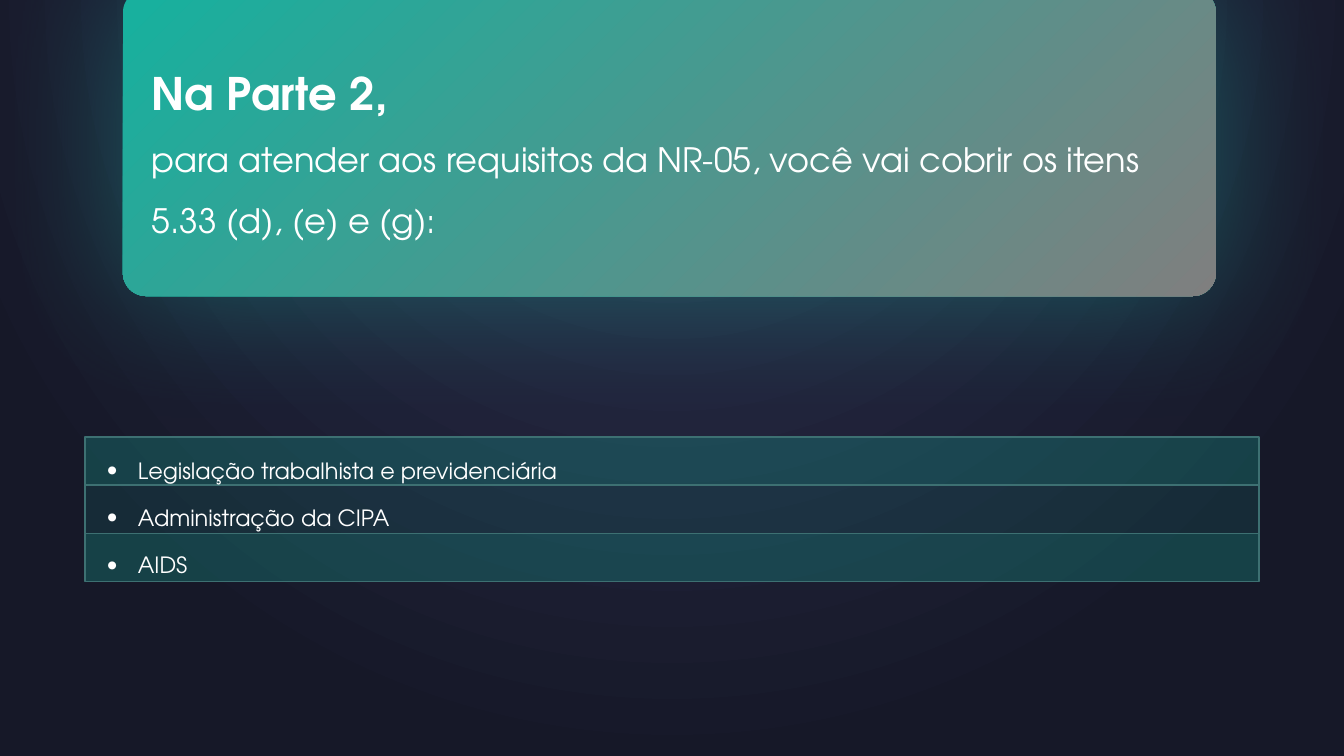
from dataclasses import dataclass

from lxml.etree import SubElement
from pptx import Presentation
from pptx.dml.color import RGBColor
from pptx.dml.fill import FillFormat
from pptx.enum.shapes import MSO_AUTO_SHAPE_TYPE as ShapeType
from pptx.enum.text import MSO_AUTO_SIZE as AutoSize
from pptx.oxml.ns import qn
from pptx.shapes.autoshape import Shape
from pptx.slide import Slide
from pptx.util import Emu, Length, Pt


@dataclass(frozen=True)
class Theme:
    font: str = "TeX Gyre Adventor"
    text: str = "FFFFFF"
    teal: str = "18B09E"
    grey: str = "7F7F7F"
    row_line: str = "3D7072"
    glow: str = "2E3252"
    night: str = "161828"
    title_size: int = 32
    lead_size: int = 24
    item_size: int = 16


@dataclass(frozen=True)
class Area:
    left: int
    top: int
    width: int
    height: int

    def emu(self) -> tuple[Length, ...]:
        return tuple(px(v) for v in (self.left, self.top, self.width, self.height))


@dataclass(frozen=True)
class Topic:
    text: str
    opacity: int


THEME = Theme()
SLIDE = Area(0, 0, 1280, 720)
CARD = Area(117, -10, 1041, 292)
CARD_TEXT = Area(135, 32, 1005, 196)
FIRST_ROW = Area(81, 416, 1118, 46)
TOPIC_TEXT = Area(92, 411, 1118, 140)
BULLET_INDENT = 30
TOPICS = [
    Topic("Legislação trabalhista e previdenciária", 27),
    Topic("Administração da CIPA", 13),
    Topic("AIDS", 27),
]


def px(count: int) -> Length:
    return Emu(count * 9525)


def rgb(color: str) -> RGBColor:
    return RGBColor.from_string(color)


def set_gradient(fill: FillFormat, start: str, end: str) -> None:
    fill.gradient()
    for stop, color, position in zip(fill.gradient_stops, (start, end), (0.02, 1)):
        stop.color.rgb = rgb(color)
        stop.position = position


def paint_background(page: Slide) -> None:
    """Give the page a circular glow centred above the middle."""
    set_gradient(page.background.fill, THEME.glow, THEME.night)
    gradient = page.element.find(".//" + qn("a:gradFill"))
    gradient.remove(gradient.find(qn("a:lin")))
    circle = SubElement(gradient, qn("a:path"), path="circle")
    SubElement(circle, qn("a:fillToRect"), l="50000", t="-80000", r="50000", b="180000")


def add_alpha(color_element, percent: int) -> None:
    SubElement(color_element, qn("a:alpha"), val=str(percent * 1000))


def add_panel(page: Slide, kind: ShapeType, area: Area) -> Shape:
    panel = page.shapes.add_shape(kind, *area.emu())
    panel.shadow.inherit = False
    return panel


def add_card(page: Slide) -> None:
    card = add_panel(page, ShapeType.ROUNDED_RECTANGLE, CARD)
    card.adjustments[0] = 0.076
    set_gradient(card.fill, THEME.teal, THEME.grey)
    card.fill.gradient_angle = 315
    card.line.fill.background()
    effects = card.element.spPr.find(qn("a:effectLst"))
    shadow = SubElement(effects, qn("a:outerShdw"), blurRad=str(Pt(100)),
                        dist="0", dir="0", algn="ctr", rotWithShape="0")
    add_alpha(SubElement(shadow, qn("a:srgbClr"), val=THEME.teal), 40)


def add_row(page: Slide, area: Area, opacity: int) -> None:
    row = add_panel(page, ShapeType.RECTANGLE, area)
    row.fill.solid()
    row.fill.fore_color.rgb = rgb(THEME.teal)
    add_alpha(row.element.spPr.find(".//" + qn("a:srgbClr")), opacity)
    row.line.color.rgb = rgb(THEME.row_line)
    row.line.width = Pt(1)


def add_text(page: Slide, area: Area, lines: list[str], *, sizes: list[int],
             spacing: float | Length, bold_first: bool = False,
             bullets: bool = False) -> None:
    frame = page.shapes.add_textbox(*area.emu()).text_frame
    frame.word_wrap = True
    frame.auto_size = AutoSize.SHAPE_TO_FIT_TEXT
    for index, (line, size) in enumerate(zip(lines, sizes)):
        para = frame.add_paragraph() if index else frame.paragraphs[0]
        para.line_spacing = spacing
        if bullets:
            properties = para._p.get_or_add_pPr()
            properties.set("marL", str(px(BULLET_INDENT)))
            properties.set("indent", str(px(-BULLET_INDENT)))
            SubElement(properties, qn("a:buFont"), typeface=THEME.font)
            SubElement(properties, qn("a:buChar"), char="•")
        span = para.add_run()
        span.text = line
        span.font.name = THEME.font
        span.font.size = Pt(size)
        span.font.bold = bold_first and index == 0
        span.font.color.rgb = rgb(THEME.text)


def main() -> None:
    deck = Presentation()
    deck.slide_width, deck.slide_height = px(SLIDE.width), px(SLIDE.height)
    page = deck.slides.add_slide(deck.slide_layouts[6])
    paint_background(page)
    add_card(page)
    add_text(
        page, CARD_TEXT,
        ["Na Parte 2,",
         "para atender aos requisitos da NR-05, você vai cobrir os itens "
         "5.33 (d), (e) e (g):"],
        sizes=[THEME.title_size, THEME.lead_size], spacing=1.5, bold_first=True,
    )
    for index, topic in enumerate(TOPICS):
        top = FIRST_ROW.top + index * FIRST_ROW.height
        add_row(page, Area(FIRST_ROW.left, top, FIRST_ROW.width, FIRST_ROW.height),
                topic.opacity)
    add_text(
        page, TOPIC_TEXT, [topic.text for topic in TOPICS],
        sizes=[THEME.item_size] * len(TOPICS), spacing=Pt(33.8), bullets=True,
    )
    deck.save("out.pptx")


if __name__ == "__main__":
    main()
